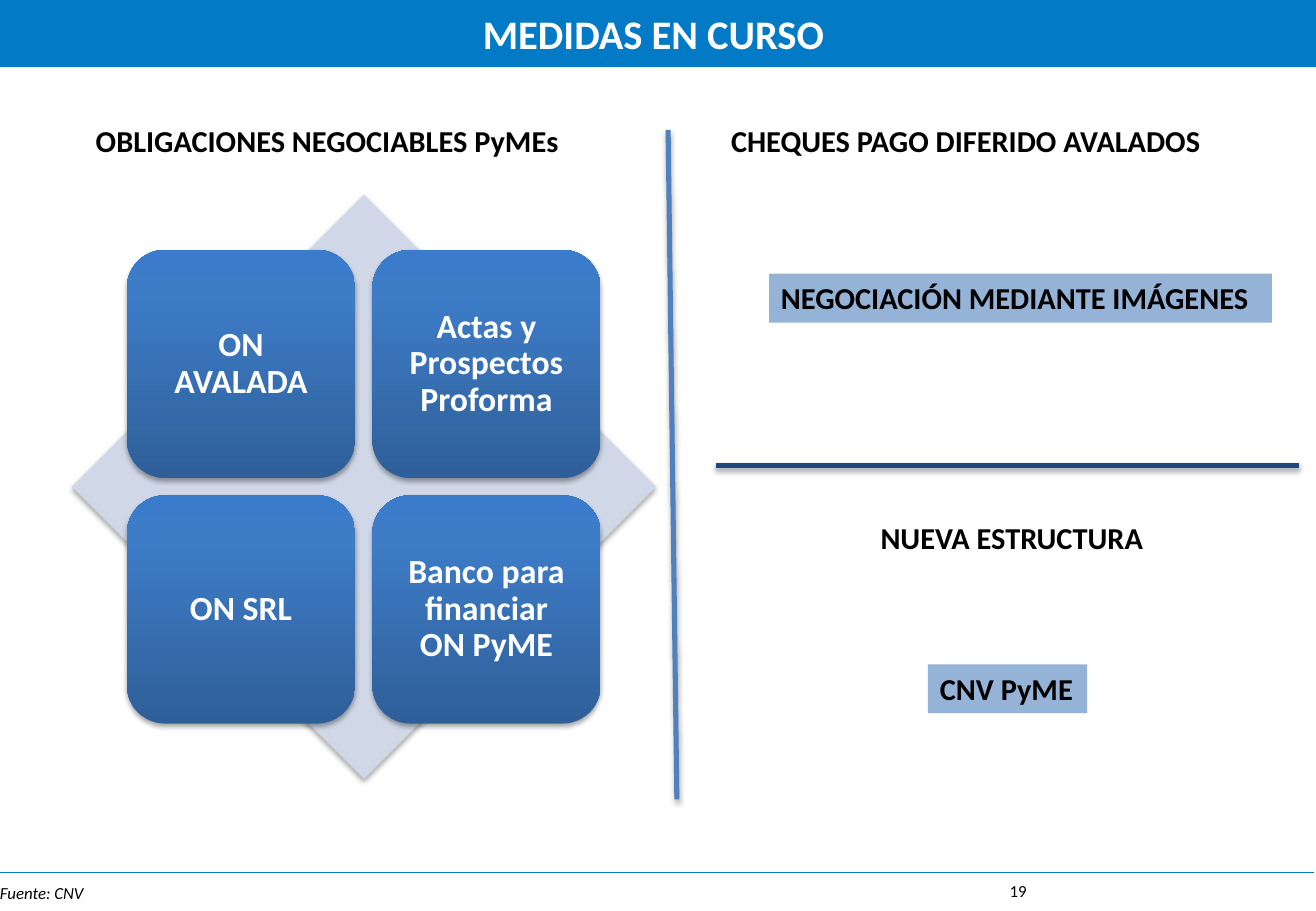
"""Build the slide on measures in progress for SME financing."""
from lxml import etree
from pptx import Presentation
from pptx import util as u
from pptx.dml import color
from pptx.enum import shapes, text
from pptx.oxml import parse_xml
from pptx.oxml.ns import nsdecls, qn

KIND = shapes.MSO_SHAPE
LEFT, CENTER = text.PP_ALIGN.LEFT, text.PP_ALIGN.CENTER
TOP, MIDDLE = text.MSO_ANCHOR.TOP, text.MSO_ANCHOR.MIDDLE
GRADIENT = (
    f'<a:gradFill {nsdecls("a")} rotWithShape="1"><a:gsLst>'
    '<a:gs pos="0"><a:srgbClr val="2F5F99"/></a:gs>'
    '<a:gs pos="80000"><a:srgbClr val="3D7CC7"/></a:gs>'
    '<a:gs pos="100000"><a:srgbClr val="3A7CCB"/></a:gs>'
    '</a:gsLst><a:lin ang="16200000" scaled="0"/></a:gradFill>'
)
SHADOW = (
    f'<a:outerShdw {nsdecls("a")} blurRad="39370" dist="22860" dir="5400000" '
    'rotWithShape="0"><a:srgbClr val="000000"><a:alpha val="35000"/>'
    '</a:srgbClr></a:outerShdw>'
)


def rgb(value):
    return color.RGBColor.from_string(value)


def write(shape, words, size, ink="000000", align=LEFT, anchor=TOP, wrap=True, **style):
    frame = shape.text_frame
    frame.word_wrap = wrap
    frame.vertical_anchor = anchor
    para = frame.paragraphs[0]
    para.alignment = align
    span = para.add_run()
    span.text = words
    formats = {"name": "Calibri", "size": u.Pt(size), **style}
    for key, value in formats.items():
        setattr(span.font, key, value)
    span.font.color.rgb = rgb(ink)
    return frame


deck = Presentation()
deck.slide_width, deck.slide_height = u.Pt(780), u.Pt(540)
page = deck.slides.add_slide(deck.slide_layouts[6])

banner = page.shapes.add_shape(KIND.RECTANGLE, 0, 0, u.Pt(780), u.Pt(39.6))
banner.shadow.inherit = False
banner.fill.solid()
banner.fill.fore_color.rgb = rgb("037AC6")
banner.line.fill.background()
write(banner, "MEDIDAS EN CURSO ", 24, "FFFFFF", CENTER, MIDDLE, bold=True)

headings = [
    ("OBLIGACIONES NEGOCIABLES PyMEs", 49.7, 68.6, 292.3, LEFT),
    ("CHEQUES PAGO DIFERIDO AVALADOS", 426.2, 68.6, 298, LEFT),
    ("NUEVA ESTRUCTURA", 457.9, 304, 283.7, CENTER),
]
for words, left, top, width, align in headings:
    box = page.shapes.add_textbox(u.Pt(left), u.Pt(top), u.Pt(width), u.Pt(29))
    write(box, words, 18, align=align, bold=True)

labels = [
    ("NEGOCIACIÓN MEDIANTE IMÁGENES", 455.8, 162.2, 298, True),
    ("CNV PyME", 550, 393.8, 94.3, False),
]
for words, left, top, width, wrap in labels:
    label = page.shapes.add_shape(
        KIND.RECTANGLE, u.Pt(left), u.Pt(top), u.Pt(width), u.Pt(29))
    label.shadow.inherit = False
    label.fill.solid()
    label.fill.fore_color.rgb = rgb("95B3D7")
    label.line.fill.background()
    write(label, words, 18, wrap=wrap, bold=True)

rules = [
    (0, 517.4, 779, 517.4, "037AB5", 0.75, False),
    (396, 77, 401.2, 473.8, "4F81BD", 3, True),
    (769.7, 275.8, 424.1, 275.8, "1F497D", 3, True),
]
for x1, y1, x2, y2, ink, weight, shaded in rules:
    rule = page.shapes.add_connector(
        shapes.MSO_CONNECTOR.STRAIGHT, u.Pt(x1), u.Pt(y1), u.Pt(x2), u.Pt(y2))
    rule.line.color.rgb = rgb(ink)
    rule.line.width = u.Pt(weight)
    effects = etree.SubElement(rule._element.spPr, qn("a:effectLst"))
    if shaded:
        effects.append(parse_xml(SHADOW))

diamond = page.shapes.add_shape(
    KIND.DIAMOND, u.Pt(42.6), u.Pt(115.4), u.Pt(346.3), u.Pt(346.3))
diamond.fill.solid()
diamond.fill.fore_color.rgb = rgb("D0D8E8")
tiles = [diamond]
topics = ["ON AVALADA", "Actas y Prospectos Proforma", "ON SRL", "Banco para financiar ON PyME"]
for index, topic in enumerate(topics):
    row, column = divmod(index, 2)
    tile = page.shapes.add_shape(
        KIND.ROUNDED_RECTANGLE, u.Pt(75.2 + 145.5 * column), u.Pt(148.1 + 145.5 * row),
        u.Pt(135.3), u.Pt(135.3))
    tile._element.spPr.append(parse_xml(GRADIENT))
    frame = write(tile, topic, 20, "FFFFFF", CENTER, MIDDLE, bold=True)
    frame.margin_left = frame.margin_right = u.Pt(14)
    frame.paragraphs[0].line_spacing = 0.9
    tiles.append(tile)

for tile in tiles:
    tile.line.fill.background()
    tile.shadow.inherit = False
    tile._element.spPr.find(qn("a:effectLst")).append(parse_xml(SHADOW))

source = page.shapes.add_textbox(0, u.Pt(519.8), u.Pt(58), u.Pt(19.4))
write(source, "Fuente: CNV", 10, wrap=False, italic=True).margin_left = 0
number = page.shapes.add_textbox(u.Pt(554.4), u.Pt(518.4), u.Pt(98), u.Pt(19.4))
write(number, "19", 10, align=CENTER)

deck.save("out.pptx")
